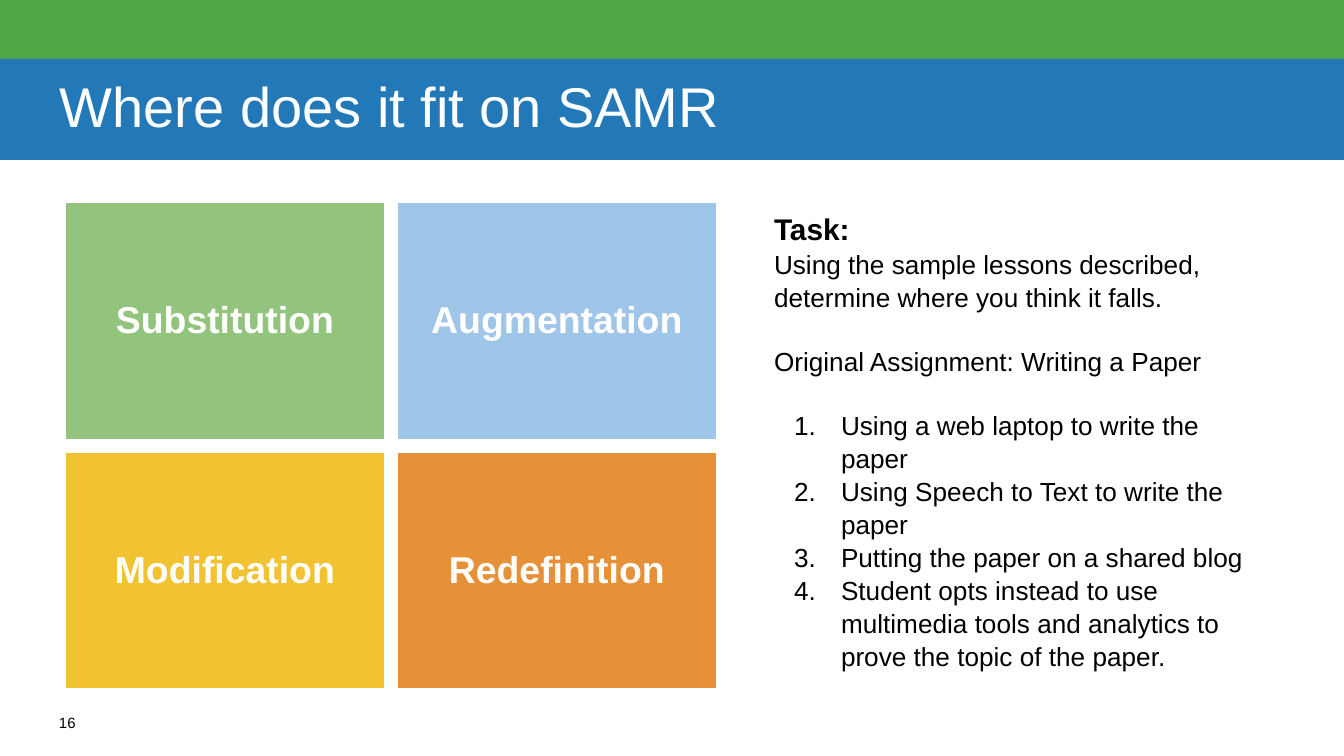
from lxml.etree import SubElement
from pptx import Presentation
from pptx.dml.color import RGBColor
from pptx.enum.shapes import MSO_SHAPE
from pptx.enum.text import MSO_ANCHOR, PP_ALIGN
from pptx.oxml.ns import qn
from pptx.util import Pt

EMU_PER_PX = 914400 / 134.4
FONT = "Arial"
COLORS = {
    "white": "FFFFFF", "black": "000000", "band": "4EA848", "title": "2379B8",
    "green": "93C47D", "sky": "9FC5E8", "yellow": "F1C232", "orange": "E69138",
}
SAMR = [
    [("Substitution", "green"), ("Augmentation", "sky")],
    [("Modification", "yellow"), ("Redefinition", "orange")],
]
LESSONS = [
    "Using a web laptop to write the paper",
    "Using Speech to Text to write the paper",
    "Putting the paper on a shared blog",
    "Student opts instead to use multimedia tools and analytics to "
    "prove the topic of the paper.",
]


def px(n):
    return round(n * EMU_PER_PX)


def rgb(name):
    return RGBColor.from_string(COLORS[name])


def set_margins(box, x, y):
    box.margin_left = box.margin_right = px(x)
    box.margin_top = box.margin_bottom = px(y)


def add_run(p, text, size, color="black", bold=False):
    r = p.add_run()
    r.text = text
    r.font.name = FONT
    r.font.size = Pt(size)
    r.font.bold = bold
    r.font.color.rgb = rgb(color)


def add_band(s, top, height, color):
    sp = s.shapes.add_shape(MSO_SHAPE.RECTANGLE, 0, px(top), px(1344), px(height))
    sp.shadow.inherit = False
    sp.fill.solid()
    sp.fill.fore_color.rgb = rgb(color)
    sp.line.fill.background()
    return sp


def add_title(s, text):
    tf = add_band(s, 59, 101, "title").text_frame
    tf.word_wrap = True
    tf.vertical_anchor = MSO_ANCHOR.MIDDLE
    set_margins(tf, 60, 0)
    p = tf.paragraphs[0]
    p.alignment = PP_ALIGN.LEFT
    p.line_spacing = 0.9
    add_run(p, text, 30, "white")


def add_text_box(s, left, top, width, height, margin):
    tf = s.shapes.add_textbox(px(left), px(top), px(width), px(height)).text_frame
    tf.word_wrap = True
    set_margins(tf, margin, margin)
    return tf


def set_borders(cell, color, width):
    tc_pr = cell._tc.get_or_add_tcPr()
    for i, side in enumerate(("a:lnL", "a:lnR", "a:lnT", "a:lnB")):
        ln = tc_pr.makeelement(qn(side), {"w": str(Pt(width))})
        fill = SubElement(ln, qn("a:solidFill"))
        SubElement(fill, qn("a:srgbClr"), val=COLORS[color])
        tc_pr.insert(i, ln)


def add_samr_table(s):
    col_width, row_height = 332, 250
    table = s.shapes.add_table(2, 2, px(59), px(196),
                               px(2 * col_width), px(2 * row_height)).table
    table.first_row = table.horz_banding = False
    for i, row in enumerate(SAMR):
        table.rows[i].height = px(row_height)
        table.columns[i].width = px(col_width)
        for j, (label, color) in enumerate(row):
            cell = table.cell(i, j)
            cell.fill.solid()
            cell.fill.fore_color.rgb = rgb(color)
            cell.vertical_anchor = MSO_ANCHOR.MIDDLE
            set_margins(cell, 15, 15)
            set_borders(cell, "white", 9)
            p = cell.text_frame.paragraphs[0]
            p.alignment = PP_ALIGN.CENTER
            add_run(p, label, 20, "white", bold=True)


def number_paragraph(p):
    p_pr = p._p.get_or_add_pPr()
    p_pr.set("marL", str(px(67)))
    p_pr.set("indent", str(px(-47)))
    bu_color = SubElement(p_pr, qn("a:buClr"))
    SubElement(bu_color, qn("a:srgbClr"), val=COLORS["black"])
    SubElement(p_pr, qn("a:buFont"), typeface=FONT)
    SubElement(p_pr, qn("a:buAutoNum"), type="arabicPeriod")


def add_task(s):
    gap = Pt(16.8)
    tf = add_text_box(s, 761, 196, 509, 470, 13)
    p = tf.paragraphs[0]
    p.line_spacing = 1.05
    add_run(p, "Task:", 16, bold=True)
    for text, before in (
        ("Using the sample lessons described, determine where you think it falls.", 0),
        ("Original Assignment: Writing a Paper", gap),
    ):
        p = tf.add_paragraph()
        p.line_spacing = 1.05
        p.space_before = before
        add_run(p, text, 14)
    for i, text in enumerate(LESSONS):
        p = tf.add_paragraph()
        p.line_spacing = 1.05
        p.space_before = 0 if i else gap
        number_paragraph(p)
        add_run(p, text, 14)


def main():
    prs = Presentation()
    prs.slide_width, prs.slide_height = px(1344), px(756)
    s = prs.slides.add_slide(prs.slide_layouts[6])
    add_band(s, 0, 59, "band")
    tf = add_text_box(s, 59, 714, 50, 27, 0)
    add_run(tf.paragraphs[0], "16", 8)
    add_title(s, "Where does it fit on SAMR")
    add_samr_table(s)
    add_task(s)
    prs.save("out.pptx")


if __name__ == "__main__":
    main()
